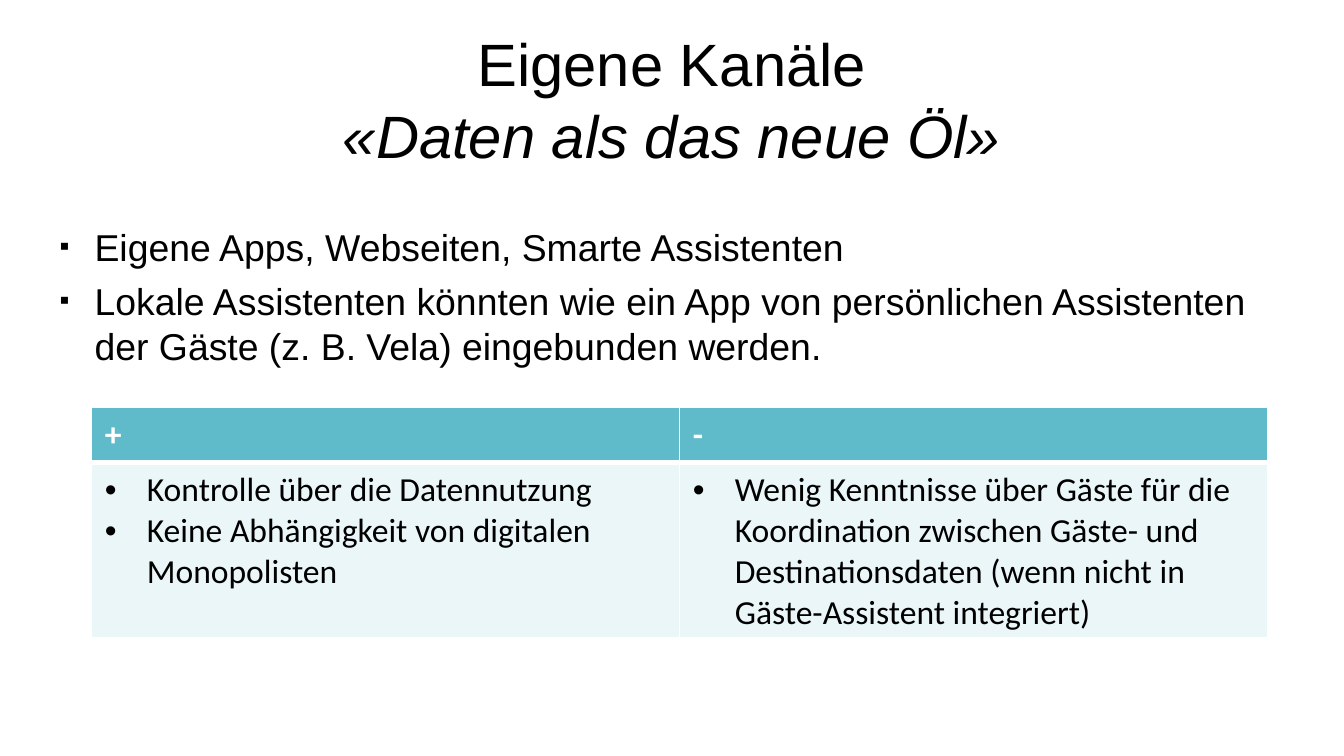
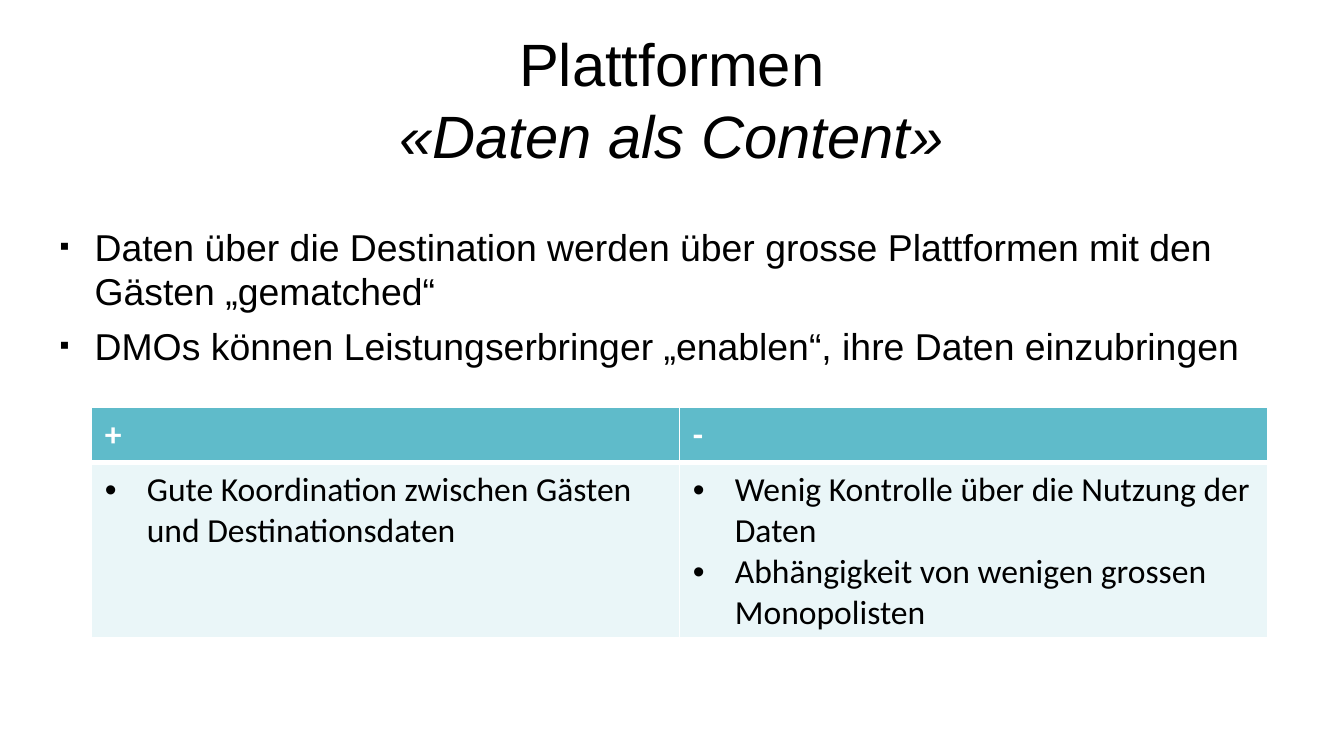
from dataclasses import dataclass
from typing import Any

import lxml.etree
import pptx
import pptx.dml.color
import pptx.enum.text
import pptx.oxml.ns
import pptx.util

SLIDE_WIDTH = pptx.util.Inches(10)
SLIDE_HEIGHT = SLIDE_WIDTH * 9 // 16
TEAL, WHITE, BLACK = "5FBBCA", "FFFFFF", "000000"
TINT_PERCENT = 13
BORDER, HEADER_RULE = 1, 3

# Text formats
TITLE_FONT = {"name": "Arial", "size": pptx.util.Pt(32)}
SUBTITLE_FONT = TITLE_FONT | {"italic": True}
POINT_FONT = {"name": "Arial", "size": pptx.util.Pt(20)}
CELL_FONT = {"name": "Calibri", "size": pptx.util.Pt(18), "bold": False}
HEADER_FONT = CELL_FONT | {"bold": True}


@dataclass(frozen=True)
class Area:
    """Left, top, width and height in percent of the slide."""
    left: float
    top: float
    width: float
    height: float

    def box(self) -> tuple[int, int, int, int]:
        return (across(self.left), down(self.top),
                across(self.width), down(self.height))


@dataclass(frozen=True)
class Bullet:
    char: str
    size_percent: int
    indent: float  # percent of the slide width
    hanging: float


@dataclass(frozen=True)
class Topic:
    title: str
    motto: str
    points: list[str]
    pros: list[str]
    cons: list[str]


TITLE_AREA = Area(2.75, 2.7, 94.5, 19)
POINTS_AREA = Area(2.75, 21.7, 94.5, 75.8)
TABLE_AREA = Area(6.8, 53.9, 87.5, 30.5)
HEADER_HEIGHT = 7.3
TITLE_INSET, POINTS_INSET = 0.9, 7.9
SQUARE = Bullet("▪", 75, 3.3, 2.6)
DOT = Bullet("•", 100, 3.13, 3.13)

TOPICS = [
    Topic(
        "Eigene Kanäle", "«Daten als das neue Öl»",
        ["Eigene Apps, Webseiten, Smarte Assistenten",
         "Lokale Assistenten könnten wie ein App von persönlichen Assistenten "
         "der Gäste (z. B. Vela) eingebunden werden."],
        ["Kontrolle über die Datennutzung",
         "Keine Abhängigkeit von digitalen Monopolisten"],
        ["Wenig Kenntnisse über Gäste für die Koordination zwischen Gäste- und "
         "Destinationsdaten (wenn nicht in Gäste-Assistent integriert)"]),
    Topic(
        "Plattformen", "«Daten als Content»",
        ["Daten über die Destination werden über grosse Plattformen mit den "
         "Gästen „gematched“",
         "DMOs können Leistungserbringer „enablen“, ihre Daten einzubringen"],
        ["Gute Koordination zwischen Gästen und Destinationsdaten"],
        ["Wenig Kontrolle über die Nutzung der Daten",
         "Abhängigkeit von wenigen grossen Monopolisten"]),
]


def across(percent: float) -> int:
    return round(SLIDE_WIDTH * percent / 100)


def down(percent: float) -> int:
    return round(SLIDE_HEIGHT * percent / 100)


def color(value: str) -> pptx.dml.color.RGBColor:
    return pptx.dml.color.RGBColor.from_string(value)


def add_element(parent: Any, tag: str, **attributes: Any) -> Any:
    element = lxml.etree.SubElement(parent, pptx.oxml.ns.qn(tag))
    for key, value in attributes.items():
        element.set(key, str(value))
    return element


def add_run(paragraph: Any, text: str, formats: dict[str, Any],
            ink: str = BLACK) -> None:
    run = paragraph.add_run()
    run.text = text
    for key, value in formats.items():
        setattr(run.font, key, value)
    run.font.color.rgb = color(ink)


def add_bullets(frame: Any, items: list[str], bullet: Bullet,
                formats: dict[str, Any], **spacing: Any) -> None:
    for index, item in enumerate(items):
        paragraph = frame.add_paragraph() if index else frame.paragraphs[0]
        for key, value in spacing.items():
            setattr(paragraph, key, value)
        properties = paragraph._p.get_or_add_pPr()
        properties.set("marL", str(across(bullet.indent)))
        properties.set("indent", str(-across(bullet.hanging)))
        add_element(properties, "a:buSzPct", val=bullet.size_percent * 1000)
        add_element(properties, "a:buFont", typeface="Arial")
        add_element(properties, "a:buChar", char=bullet.char)
        add_run(paragraph, item, formats)


def add_text_area(slide: Any, area: Area, top_inset: float) -> Any:
    frame = slide.shapes.add_textbox(*area.box()).text_frame
    frame.word_wrap = True
    frame.margin_top = down(top_inset)
    return frame


def style_cell(cell: Any, bottom: int, opacity: int) -> None:
    properties = cell._tc.get_or_add_tcPr()
    widths = {"a:lnL": BORDER, "a:lnR": BORDER, "a:lnT": BORDER, "a:lnB": bottom}
    for tag, width in widths.items():
        line = add_element(properties, tag, w=pptx.util.Pt(width))
        add_element(add_element(line, "a:solidFill"), "a:srgbClr", val=WHITE)
    cell.fill.solid()
    cell.fill.fore_color.rgb = color(TEAL)
    if opacity < 100:
        teal = properties.find(pptx.oxml.ns.qn("a:solidFill"))[0]
        add_element(teal, "a:alpha", val=opacity * 1000)


# Parts of a slide
def add_title(slide: Any, topic: Topic) -> None:
    heading = add_text_area(slide, TITLE_AREA, TITLE_INSET).paragraphs[0]
    heading.alignment = pptx.enum.text.PP_ALIGN.CENTER
    add_run(heading, topic.title, TITLE_FONT)
    heading.add_line_break()
    add_run(heading, topic.motto, SUBTITLE_FONT)


def add_points(slide: Any, topic: Topic) -> None:
    frame = add_text_area(slide, POINTS_AREA, POINTS_INSET)
    add_bullets(frame, topic.points, SQUARE, POINT_FONT,
                space_after=pptx.util.Pt(5))


def add_comparison(slide: Any, topic: Topic) -> None:
    comparison = slide.shapes.add_table(2, 2, *TABLE_AREA.box()).table
    comparison.rows[0].height = down(HEADER_HEIGHT)
    comparison.rows[1].height = down(TABLE_AREA.height - HEADER_HEIGHT)
    sides = [("+", topic.pros), ("-", topic.cons)]
    for column, (sign, arguments) in enumerate(sides):
        header, body = (comparison.cell(row, column) for row in range(2))
        style_cell(header, HEADER_RULE, 100)
        add_run(header.text_frame.paragraphs[0], sign, HEADER_FONT, WHITE)
        style_cell(body, BORDER, TINT_PERCENT)
        add_bullets(body.text_frame, arguments, DOT, CELL_FONT)


def main() -> None:
    deck = pptx.Presentation()
    deck.slide_width, deck.slide_height = SLIDE_WIDTH, SLIDE_HEIGHT
    for topic in TOPICS:
        slide = deck.slides.add_slide(deck.slide_layouts[6])
        for add_part in (add_title, add_points, add_comparison):
            add_part(slide, topic)
    deck.save("out.pptx")


if __name__ == "__main__":
    main()
